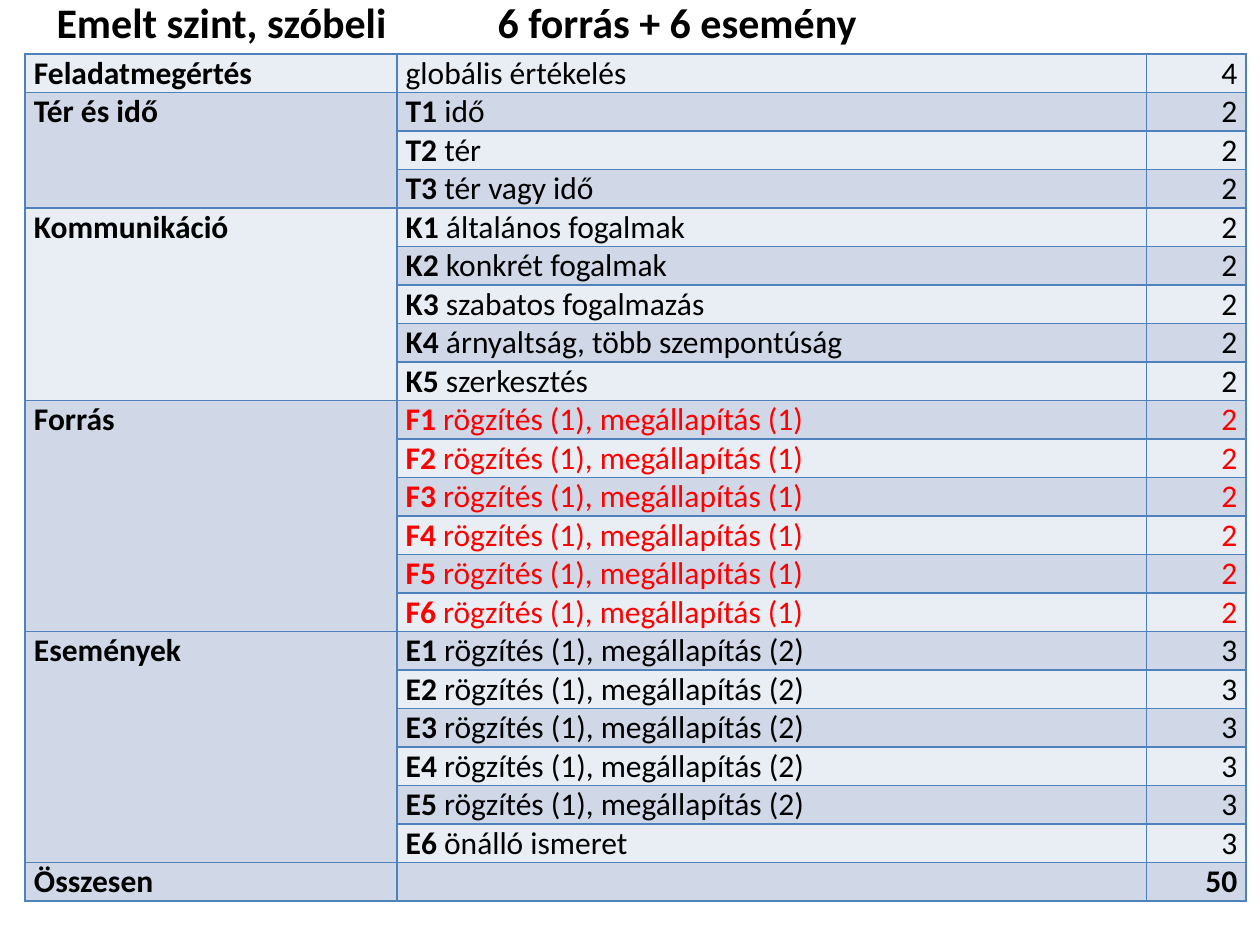
"""Build the score table slide for the advanced oral exam."""
from lxml.etree import fromstring
from pptx import Presentation
from pptx.dml.color import RGBColor
from pptx.enum.text import MSO_ANCHOR, MSO_AUTO_SIZE, PP_ALIGN
from pptx.oxml.ns import nsdecls
from pptx.util import Inches, Pt

BLACK = RGBColor(0x00, 0x00, 0x00)
RED = RGBColor(0xFF, 0x00, 0x00)
LIGHT = RGBColor(0xE9, 0xED, 0xF4)
DARK = RGBColor(0xD0, 0xD8, 0xE8)
EDGE = RGBColor(0x4F, 0x81, 0xBD)
FONT = "Calibri"

TITLE = "Emelt szint, szóbeli\t\t6 forrás + 6 esemény"
SOURCE = "rögzítés (1), megállapítás (1)"
EVENT = "rögzítés (1), megállapítás (2)"
GROUPS = [
    ("Feladatmegértés", "", 4, BLACK, ["globális értékelés"]),
    ("Tér és idő", "T", 2, BLACK, ["idő", "tér", "tér vagy idő"]),
    ("Kommunikáció", "K", 2, BLACK, [
        "általános fogalmak", "konkrét fogalmak", "szabatos fogalmazás",
        "árnyaltság, több szempontúság", "szerkesztés"]),
    ("Forrás", "F", 2, RED, [SOURCE] * 6),
    ("Események", "E", 3, BLACK, [EVENT] * 5 + ["önálló ismeret"]),
    ("Összesen", "", 50, BLACK, [""]),
]
WIDTHS = [2.95, 5.95, 0.79]
ROW = 0.3


def style(para, color, bold=False, size=18):
    font = para.font
    font.name, font.size, font.bold = FONT, Pt(size), bold
    font.color.rgb = color


def frame(cell, fill):
    cell.fill.solid()
    cell.fill.fore_color.rgb = fill
    cell.margin_left = cell.margin_right = Inches(0.07)
    cell.margin_top = cell.margin_bottom = 0
    props = cell._tc.get_or_add_tcPr()
    for spot, side in enumerate("LRTB"):
        props.insert(spot, fromstring(
            f'<a:ln{side} {nsdecls("a")} w="{Pt(1)}"><a:solidFill>'
            f'<a:srgbClr val="{EDGE}"/></a:solidFill></a:ln{side}>'))


def write(cell, text, color=BLACK, bold=False, code=""):
    para = cell.text_frame.paragraphs[0]
    style(para, color, bold)
    if code:
        run = para.add_run()
        run.text, run.font.bold = code, True
        text = " " + text
    if text:
        para.add_run().text = text
    return para


def add_scores(slide):
    count = sum(len(items) for *_, items in GROUPS)
    shape = slide.shapes.add_table(
        count, len(WIDTHS), Inches(0.2), Inches(0.43),
        Inches(sum(WIDTHS)), Inches(ROW * count))
    table = shape.table
    table.first_row = table.horz_banding = False
    for col, width in zip(table.columns, WIDTHS):
        col.width = Inches(width)
    for index, row in enumerate(table.rows):
        row.height = Inches(ROW)
        for cell in row.cells:
            frame(cell, DARK if index % 2 else LIGHT)

    top = 0
    for name, mark, score, color, items in GROUPS:
        head = table.cell(top, 0)
        if len(items) > 1:
            head.merge(table.cell(top + len(items) - 1, 0))
        write(head, name, bold=True)
        for step, item in enumerate(items):
            code = f"{mark}{step + 1}" if mark else ""
            write(table.cell(top + step, 1), item, color, code=code)
            para = write(table.cell(top + step, 2), str(score), color, not item)
            para.alignment = PP_ALIGN.RIGHT
        top += len(items)


def add_title(slide):
    box = slide.shapes.add_textbox(
        Inches(0.35), Inches(-0.08), Inches(7.12), Inches(0.5))
    text = box.text_frame
    text.word_wrap = False
    text.auto_size = MSO_AUTO_SIZE.SHAPE_TO_FIT_TEXT
    text.vertical_anchor = MSO_ANCHOR.MIDDLE
    para = text.paragraphs[0]
    para.add_run().text = TITLE
    style(para, BLACK, True, 24)


def main():
    deck = Presentation()
    deck.slide_width, deck.slide_height = Inches(10), Inches(7.5)
    slide = deck.slides.add_slide(deck.slide_layouts[6])
    add_scores(slide)
    add_title(slide)
    deck.save("out.pptx")


if __name__ == "__main__":
    main()
